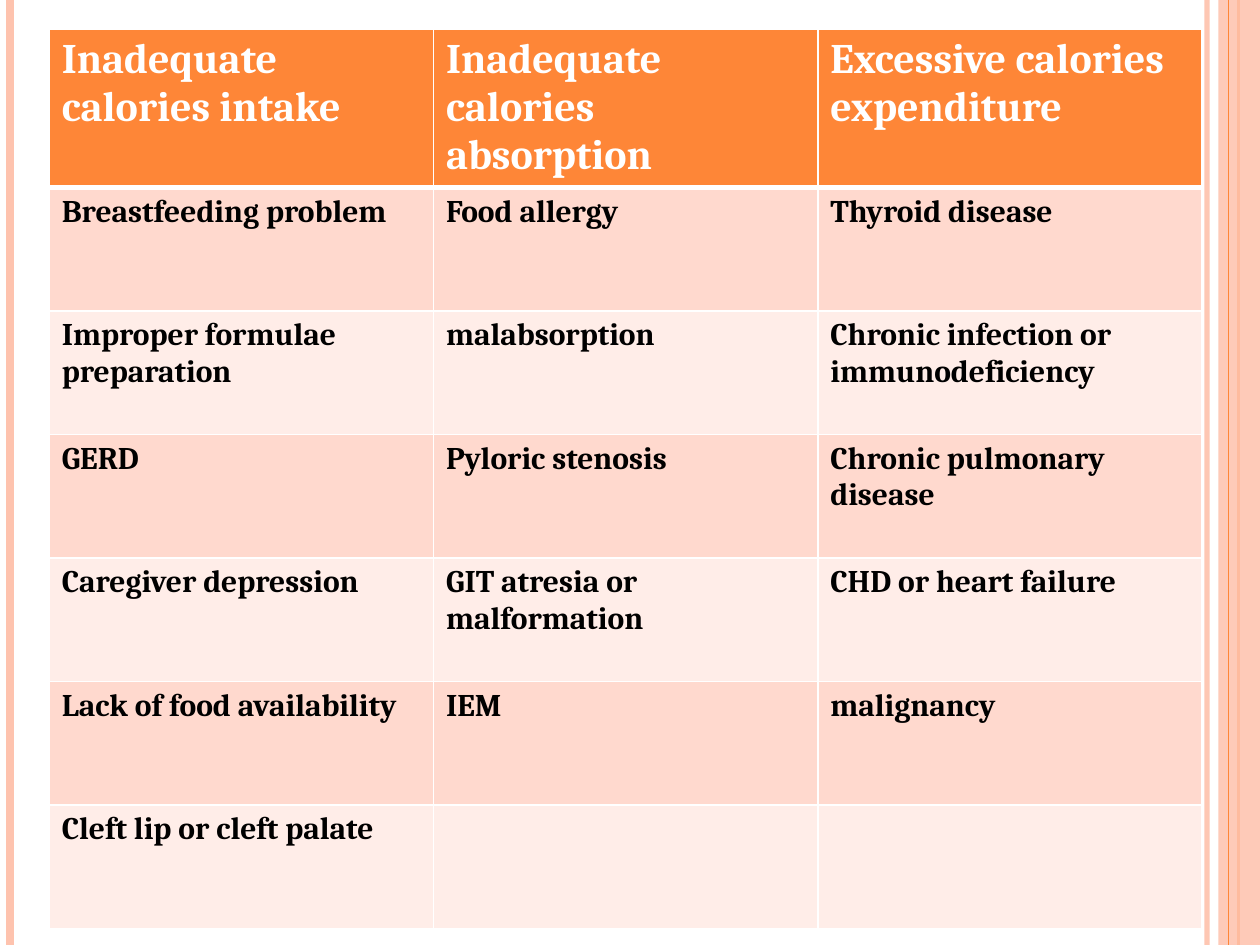
"""Build a slide with a table of causes grouped by calorie problem."""
from dataclasses import dataclass

from lxml import etree
from pptx import Presentation
from pptx.dml.color import RGBColor
from pptx.enum.shapes import MSO_CONNECTOR, MSO_SHAPE
from pptx.oxml.ns import qn
from pptx.util import Inches, Pt

STRAIGHT = MSO_CONNECTOR.STRAIGHT
RECTANGLE = MSO_SHAPE.RECTANGLE
BLANK_LAYOUT = 6
SLIDE_WIDTH, SLIDE_HEIGHT = 10, 7.5

ORANGE, PEACH, WHITE, BLACK = "FE8637", "FEC3AE", "FFFFFF", "000000"
BAND_FILLS = ("FFEDE8", "FFD9CE")

TABLE_LEFT, TABLE_TOP = 0.39, 0.23
COLUMN_WIDTH, HEADER_HEIGHT, ROW_HEIGHT = 3.05, 1.26, 0.98
THIN_BORDER, THICK_BORDER = 1, 3

CAUSES = (
    ("Inadequate calories intake", "Inadequate calories absorption", "Excessive calories expenditure"),
    ("Breastfeeding problem", "Food allergy", "Thyroid disease"),
    ("Improper formulae preparation", "malabsorption", "Chronic infection or immunodeficiency"),
    ("GERD", "Pyloric stenosis", "Chronic pulmonary disease"),
    ("Caregiver depression", "GIT atresia or malformation", "CHD or heart failure"),
    ("Lack of food availability", "IEM", "malignancy"),
    ("Cleft lip or cleft palate", "", ""),
)


@dataclass(frozen=True)
class Stripe:
    left: float
    width: float
    color: str
    opacity: int = 100


@dataclass(frozen=True)
class RowStyle:
    fill: str
    text_color: str
    text_size: int
    top_border: int
    bottom_border: int


STRIPES_BEHIND = (
    Stripe(9.58, 3, PEACH, 93),
    Stripe(0.08, 4.5, PEACH),
    Stripe(9.83, 1.5, ORANGE),
)
SIDE_BAND = Stripe(9.67, 0.33, PEACH, 87)
STRIPE_IN_FRONT = Stripe(9.75, 0.75, ORANGE)


def rgb(color: str) -> RGBColor:
    return RGBColor.from_string(color)


def set_opacity(shape, percent: int) -> None:
    color = next(shape._element.spPr.iter(qn("a:srgbClr")))
    etree.SubElement(color, qn("a:alpha"), val=str(percent * 1000))


def draw_stripe(slide, stripe: Stripe) -> None:
    left = Inches(stripe.left)
    connector = slide.shapes.add_connector(STRAIGHT, left, 0, left, Inches(SLIDE_HEIGHT))
    connector.line.color.rgb = rgb(stripe.color)
    connector.line.width = Pt(stripe.width)
    set_opacity(connector, stripe.opacity)
    etree.SubElement(connector._element.spPr, qn("a:effectLst"))


def draw_band(slide, band: Stripe) -> None:
    shape = slide.shapes.add_shape(
        RECTANGLE, Inches(band.left), 0, Inches(band.width), Inches(SLIDE_HEIGHT)
    )
    shape.shadow.inherit = False
    shape.fill.solid()
    shape.fill.fore_color.rgb = rgb(band.color)
    shape.line.fill.background()
    set_opacity(shape, band.opacity)


def row_style(row: int) -> RowStyle:
    if row == 0:
        return RowStyle(ORANGE, WHITE, 24, THIN_BORDER, THICK_BORDER)
    top_border = THICK_BORDER if row == 1 else THIN_BORDER
    return RowStyle(BAND_FILLS[row % 2], BLACK, 18, top_border, THIN_BORDER)


def set_borders(cell, style: RowStyle) -> None:
    properties = cell._tc.get_or_add_tcPr()
    widths = {
        "a:lnL": THIN_BORDER,
        "a:lnR": THIN_BORDER,
        "a:lnT": style.top_border,
        "a:lnB": style.bottom_border,
    }
    for position, (tag, width) in enumerate(widths.items()):
        border = etree.Element(qn(tag), w=str(Pt(width)))
        fill = etree.SubElement(border, qn("a:solidFill"))
        etree.SubElement(fill, qn("a:srgbClr"), val=WHITE)
        properties.insert(position, border)


def fill_cell(cell, text: str, style: RowStyle) -> None:
    cell.text = text
    cell.fill.solid()
    cell.fill.fore_color.rgb = rgb(style.fill)
    set_borders(cell, style)
    font = cell.text_frame.paragraphs[0].font
    if text:
        font = cell.text_frame.paragraphs[0].runs[0].font
    font_format = {"name": "Cambria", "size": Pt(style.text_size), "bold": True}
    for attribute, value in font_format.items():
        setattr(font, attribute, value)
    font.color.rgb = rgb(style.text_color)


def draw_table(slide) -> None:
    row_count, column_count = len(CAUSES), len(CAUSES[0])
    height = HEADER_HEIGHT + ROW_HEIGHT * (row_count - 1)
    table = slide.shapes.add_table(
        row_count, column_count, Inches(TABLE_LEFT), Inches(TABLE_TOP),
        Inches(COLUMN_WIDTH * column_count), Inches(height),
    ).table
    for column in table.columns:
        column.width = Inches(COLUMN_WIDTH)
    for row, texts in enumerate(CAUSES):
        table.rows[row].height = Inches(ROW_HEIGHT if row else HEADER_HEIGHT)
        for column, text in enumerate(texts):
            fill_cell(table.cell(row, column), text, row_style(row))


def main() -> None:
    presentation = Presentation()
    presentation.slide_width = Inches(SLIDE_WIDTH)
    presentation.slide_height = Inches(SLIDE_HEIGHT)
    slide = presentation.slides.add_slide(presentation.slide_layouts[BLANK_LAYOUT])
    for stripe in STRIPES_BEHIND:
        draw_stripe(slide, stripe)
    draw_band(slide, SIDE_BAND)
    draw_stripe(slide, STRIPE_IN_FRONT)
    draw_table(slide)
    presentation.save("out.pptx")


if __name__ == "__main__":
    main()
